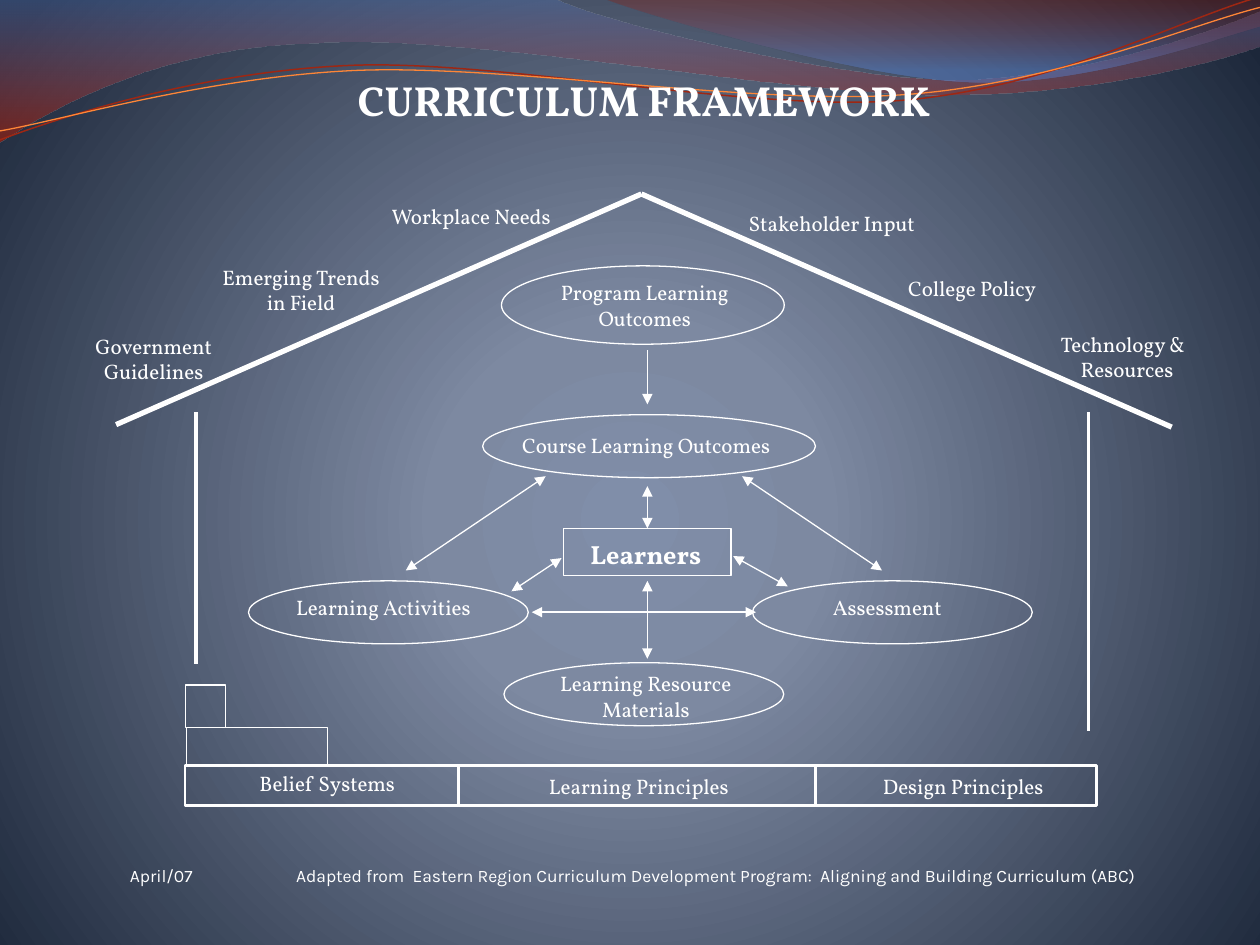
from dataclasses import dataclass
from itertools import accumulate

from lxml import etree
from pptx import Presentation, util as u
from pptx.dml import color
from pptx.enum import shapes as kinds, text
from pptx.oxml import ns

WHITE = "FFFFFF"
SERIF, SANS = "Vollkorn", "Karla"


@dataclass
class Label:
    words: str
    left: float
    top: float
    width: float
    height: float = 0.76
    size: float = 12
    bold: bool = False


@dataclass
class Outline:
    left: float
    top: float
    width: float
    height: float
    weight: float = 0.75
    preset: int = kinds.MSO_SHAPE.RECTANGLE


@dataclass
class Stroke:
    x1: float
    y1: float
    x2: float
    y2: float
    weight: float = 0.75
    arrows: tuple = ("head", "tail")


@dataclass
class Wave:
    start: tuple
    segments: list  # 2 numbers: line to a point; 6 numbers: cubic curve
    stops: tuple = ()
    line: str = ""
    weight: float = 0


def rgb(hex_code: str) -> color.RGBColor:
    return color.RGBColor.from_string(hex_code)


def set_gradient(parent, stops, direction: str) -> None:
    """Swap the solid fill of parent for a gradient of (position, colour, alpha) stops."""
    marks = "".join(
        f'<a:gs pos="{pos * 1000}"><a:srgbClr val="{hex_code}">'
        f'<a:alpha val="{alpha * 1000}"/></a:srgbClr></a:gs>'
        for pos, hex_code, alpha in stops)
    gradient = etree.fromstring(
        f'<a:gradFill {ns.nsdecls("a")} rotWithShape="1">'
        f"<a:gsLst>{marks}</a:gsLst>{direction}</a:gradFill>")
    parent.replace(parent.find(ns.qn("a:solidFill")), gradient)


def bend(ribbon, segments) -> None:
    """Merge the three straight steps of each cubic segment into one curve."""
    steps = iter(ribbon._element.findall(f".//{ns.qn('a:lnTo')}"))
    for segment in segments:
        group = [next(steps) for _ in range(len(segment) // 2)]
        if len(group) == 3:
            curve = etree.Element(ns.qn("a:cubicBezTo"))
            group[0].addprevious(curve)
            for step in group:
                curve.append(step[0])
                step.getparent().remove(step)


def draw_wave(slide, wave: Wave) -> None:
    builder = slide.shapes.build_freeform(*map(u.Cm, wave.start))
    builder.add_line_segments(
        [(u.Cm(x), u.Cm(y)) for segment in wave.segments
         for x, y in zip(segment[::2], segment[1::2])],
        close=bool(wave.stops))
    ribbon = builder.convert_to_shape()
    bend(ribbon, wave.segments)
    ribbon.shadow.inherit = False
    if wave.stops:
        ribbon.fill.solid()
        set_gradient(ribbon._element.spPr, wave.stops, '<a:lin ang="5400000" scaled="1"/>')
        ribbon.line.fill.background()
    else:
        ribbon.fill.background()
        ribbon.line.color.rgb = rgb(wave.line)
        ribbon.line.width = u.Pt(wave.weight)


def write(frame, words: str, size: float, font: str = SERIF, bold: bool = False,
          align=text.PP_ALIGN.CENTER) -> None:
    frame.word_wrap = True
    frame.vertical_anchor = text.MSO_ANCHOR.TOP
    frame.auto_size = text.MSO_AUTO_SIZE.SHAPE_TO_FIT_TEXT
    paragraph = frame.paragraphs[0]
    paragraph.alignment = align
    run = paragraph.add_run()
    run.text = words
    run.font.name, run.font.size, run.font.bold = font, u.Pt(size), bold
    run.font.color.rgb = rgb(WHITE)


def draw_label(slide, label: Label) -> None:
    box = slide.shapes.add_textbox(
        *map(u.Cm, (label.left, label.top, label.width, label.height)))
    write(box.text_frame, label.words, label.size, bold=label.bold)


def draw_outline(slide, outline: Outline):
    frame = slide.shapes.add_shape(
        outline.preset, *map(u.Cm, (outline.left, outline.top, outline.width, outline.height)))
    frame.shadow.inherit = False
    frame.fill.background()
    frame.line.color.rgb = rgb(WHITE)
    frame.line.width = u.Pt(outline.weight)
    return frame


def draw_stroke(slide, stroke: Stroke):
    line = slide.shapes.add_connector(
        kinds.MSO_CONNECTOR.STRAIGHT, *map(u.Cm, (stroke.x1, stroke.y1, stroke.x2, stroke.y2)))
    line.line.color.rgb = rgb(WHITE)
    line.line.width = u.Pt(stroke.weight)
    for end in stroke.arrows:
        etree.SubElement(line.line._get_or_add_ln(), ns.qn(f"a:{end}End"), type="triangle")
    etree.SubElement(line._element.spPr, ns.qn("a:effectLst"))
    return line


WAVES = [
    Wave((0, 0), [(11.18, -0.03), (12.09, 0.43, 16.87, 1.6, 19.25, 1.6),
                  (21.67, 1.6, 24.33, 0.66, 25.4, 0.23), (25.43, 0.91),
                  (24.97, 1.12, 22.1, 1.93, 18.95, 1.91), (15.8, 1.91, 9.7, 0.71, 6.53, 0.86),
                  (3.28, 0.91, 1.17, 2.11, -0.03, 2.87)],
         stops=((0, "4F6EA8", 45), (100, "B61A00", 55))),
    Wave((12.17, -0.03), [(12.93, 0.28, 17.32, 1.57, 19.53, 1.65),
                          (21.74, 1.75, 24.41, 0.81, 25.4, 0.53), (25.4, 0)],
         stops=((0, "951500", 30), (80, "5681D1", 45))),
    Wave((0, 2.82), [(1.22, 2.36, 4.01, 1.45, 7.04, 1.32), (10.03, 1.19, 15.06, 2.26, 18.11, 2.03),
                     (21.16, 1.8, 23.83, 0.38, 25.35, -0.05)], line="9E2713", weight=0.85),
    Wave((0, 2.64), [(1.19, 2.44, 4.17, 1.55, 7.19, 1.42), (10.24, 1.3, 15.16, 2.13, 18.21, 1.91),
                     (21.23, 1.7, 23.9, 0.53, 25.4, 0.15)], line="FE8637", weight=0.75),
]
OVAL = kinds.MSO_SHAPE.OVAL
OUTCOME_OVALS = [
    Outline(10.11, 5.36, 5.7, 1.58, preset=OVAL),
    Outline(9.73, 8.36, 6.71, 1.27, preset=OVAL),
    *(Outline(left, top, 5.64, 1.27, preset=OVAL)
      for left, top in ((15.17, 11.71), (5.01, 11.71), (10.16, 13.36))),
]
LABELS = [
    Label("Government Guidelines", 1.12, 6.59, 3.96, 1.27),
    Label("Emerging Trends in Field", 4.09, 5.21, 3.96, 1.27),
    Label("Workplace Needs", 7.52, 3.97, 3.96),
    Label("Technology &   Resources", 21.03, 6.55, 3.38, 1.27),
    Label("College Policy", 17.91, 5.44, 3.38),
    Label("Stakeholder Input", 14.79, 4.11, 3.96),
    Label("Program Learning Outcomes", 10.83, 5.52, 4.34, 1.27),
    Label("Course Learning Outcomes", 10.11, 8.59, 5.84),
    Label("Assessment", 15.73, 11.86, 4.32),
    Label("Learning Activities", 5.57, 11.86, 4.32),
    Label("Learning Resource Materials", 10.76, 13.4, 4.52, 1.27),
    Label("Learners", 11.33, 10.72, 3.38, 0.89, size=15, bold=True),
    Label("Belief Systems", 3.88, 15.4, 5.44),
    Label("Learning Principles", 9.5, 15.47, 6.76),
    Label("Design Principles", 16.03, 15.47, 6.78),
]
FLOWS = [
    Stroke(10.72, 12.34, 15.24, 12.34),
    Stroke(13.05, 11.71, 13.05, 13.28),
    Stroke(8.18, 11.5, 11, 9.6),
    Stroke(17.78, 11.5, 14.96, 9.6),
    Stroke(13.05, 7.06, 13.05, 8.15, arrows=("tail",)),
    Stroke(11.32, 11.25, 10.31, 11.92),
    Stroke(14.78, 11.21, 15.88, 11.82),
]
ROOF_AND_WALLS = [
    Stroke(2.34, 8.56, 12.93, 3.91, 3, ()),
    Stroke(23.62, 8.61, 12.93, 3.91, 3, ()),
    Stroke(3.95, 8.31, 3.95, 13.39, 2, ()),
    Stroke(21.94, 8.31, 21.94, 14.73, 2, ()),
]
FOUNDATION_LEFT, FOUNDATION_WIDTHS = 3.73, (5.52, 7.19, 5.67)
BRICKS = [Outline(3.76, 14.66, 2.84, 0.76), Outline(3.74, 13.81, 0.81, 0.86)]


def main() -> None:
    deck = Presentation()
    deck.slide_width, deck.slide_height = u.Cm(25.4), u.Cm(19.05)
    slide = deck.slides.add_slide(deck.slide_layouts[5])

    # Background and waves
    slide.background.fill.solid()
    set_gradient(slide._element.find(f".//{ns.qn('p:bgPr')}"),
                 ((0, "808EA9", 100), (25, "7D89A1", 100), (100, "1C273A", 100)),
                 '<a:path path="circle"><a:fillToRect l="10000" t="110000" '
                 'r="10000" b="100000"/></a:path>')
    for wave in WAVES:
        draw_wave(slide, wave)

    # Title, raised above the waves
    title = slide.shapes.title
    title.left, title.top, title.width, title.height = map(u.Cm, (2.11, 1.37, 21.74, 1.27))
    write(title.text_frame, "CURRICULUM FRAMEWORK", 24, bold=True)
    slide.shapes._spTree.append(title._element)

    # Outcomes and labels
    for oval in OUTCOME_OVALS:
        draw_outline(slide, oval)
    for label in LABELS:
        draw_label(slide, label)

    # Learners and the flows around them
    learners = draw_outline(slide, Outline(11.36, 10.65, 3.38, 0.96))
    for flow in FLOWS:
        draw_stroke(slide, flow)
    draw_stroke(slide, Stroke(13.05, 9.8, 13.05, 10.65)).end_connect(learners, 0)

    # Date and credit, set apart by a tab stop
    footer = slide.shapes.add_textbox(*map(u.Cm, (2.37, 17.32, 23.03, 0.69))).text_frame
    write(footer, "April/07\tAdapted from  Eastern Region Curriculum Development Program:  "
          "Aligning and Building Curriculum (ABC)", 10, SANS, align=text.PP_ALIGN.LEFT)
    tabs = etree.SubElement(footer.paragraphs[0]._p.get_or_add_pPr(), ns.qn("a:tabLst"))
    etree.SubElement(tabs, ns.qn("a:tab"), pos=str(u.Cm(3.35)), algn="l")

    # House: foundation, roof, walls and bricks
    lefts = accumulate(FOUNDATION_WIDTHS, initial=FOUNDATION_LEFT)
    for left, width in zip(lefts, FOUNDATION_WIDTHS):
        draw_outline(slide, Outline(left, 15.43, width, 0.81, 1.5))
    for stroke in ROOF_AND_WALLS:
        draw_stroke(slide, stroke)
    for brick in BRICKS:
        draw_outline(slide, brick)

    deck.save("out.pptx")


if __name__ == "__main__":
    main()
